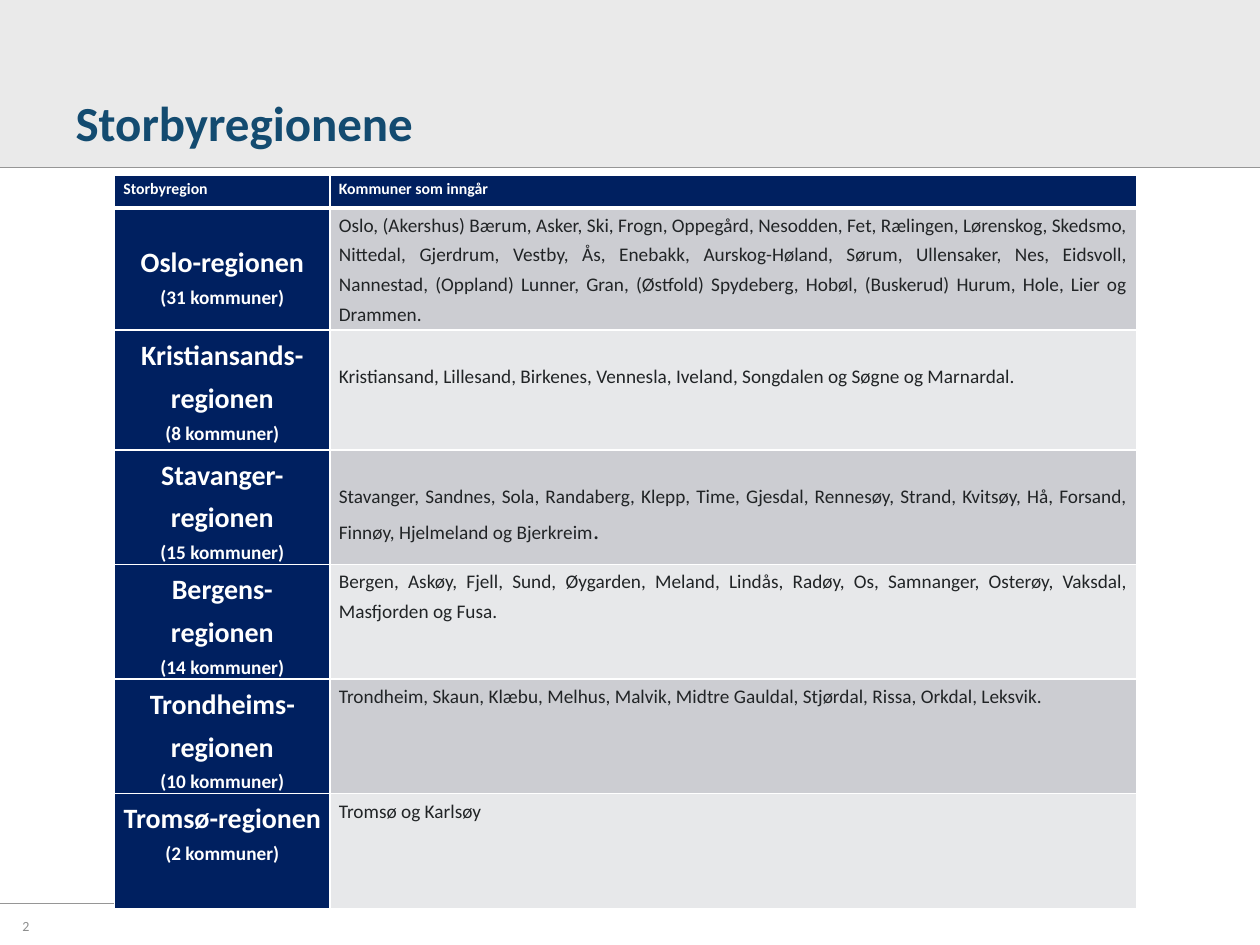
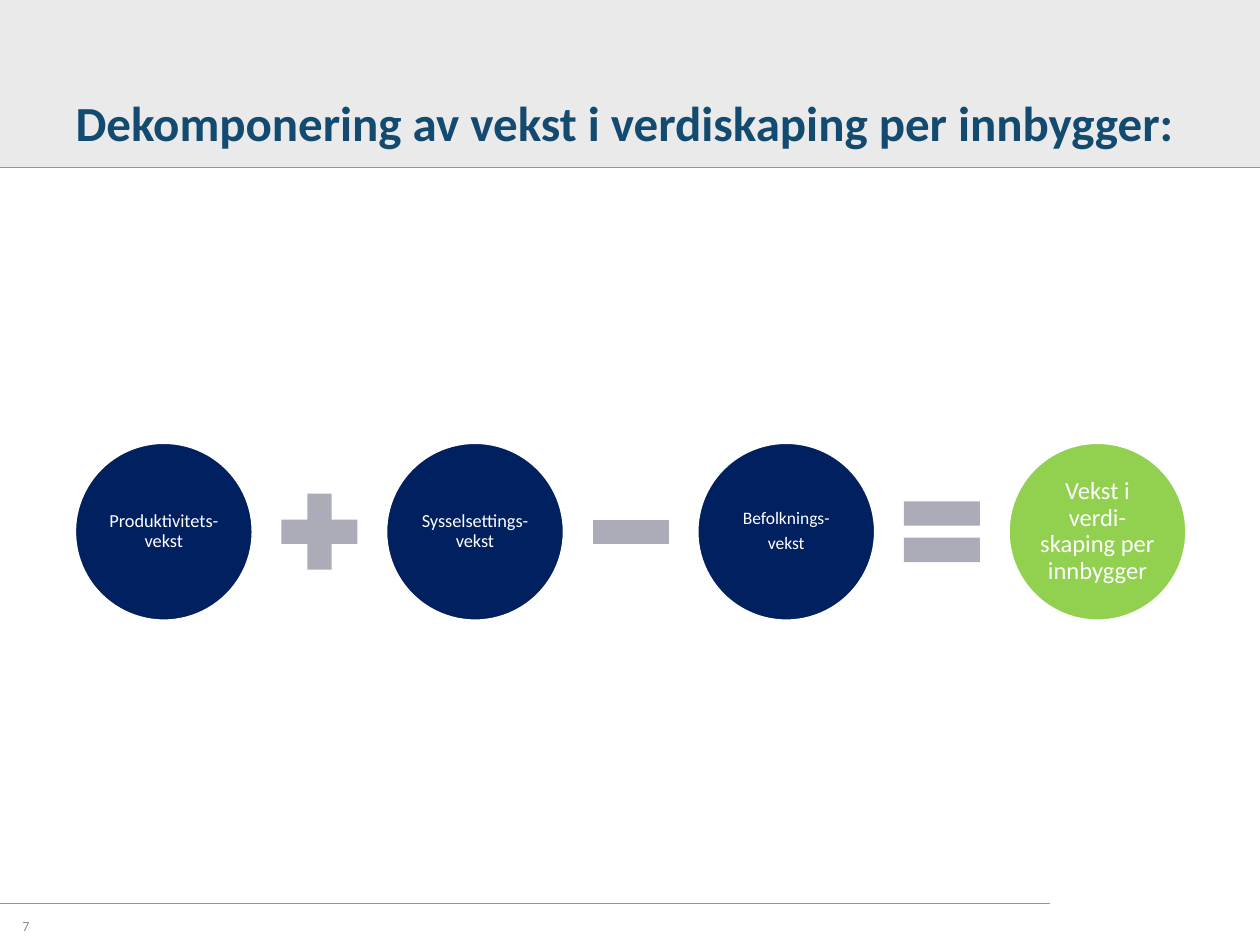
"""Build two slides on Norwegian city regions and the decomposition of growth."""
from lxml import etree
from pptx import Presentation
from pptx.dml.color import RGBColor
from pptx.enum import shapes, text
from pptx.oxml import ns
from pptx.util import Inches, Pt

COLORS = {
    "title": "134B70", "band": "EAEAEA", "rule": "969696", "number": "8D8E8E",
    "navy": "002060", "green": "92D050", "operator": "ABACB7", "white": "FFFFFF",
    "body": "212426", "dark_row": "CCCDD2", "light_row": "E7E8EA",
}
FONT = "Calibri"
ALIGN = text.PP_ALIGN
SHAPE = shapes.MSO_SHAPE

HEADINGS = ("Storbyregion", "Kommuner som inngår")
REGIONS = [
    ("Oslo-regionen", "(31 kommuner)",
     "Oslo, (Akershus) Bærum, Asker, Ski, Frogn, Oppegård, Nesodden, Fet, Rælingen, "
     "Lørenskog, Skedsmo, Nittedal, Gjerdrum, Vestby, Ås, Enebakk, Aurskog-Høland, Sørum, "
     "Ullensaker, Nes, Eidsvoll, Nannestad, (Oppland) Lunner, Gran, (Østfold) Spydeberg, "
     "Hobøl, (Buskerud) Hurum, Hole, Lier og Drammen."),
    ("Kristiansands-regionen", "(8 kommuner)",
     "Kristiansand, Lillesand, Birkenes, Vennesla, Iveland, Songdalen og Søgne og Marnardal."),
    ("Stavanger-regionen", "(15 kommuner)",
     "Stavanger, Sandnes, Sola, Randaberg, Klepp, Time, Gjesdal, Rennesøy, Strand, Kvitsøy, "
     "Hå, Forsand, Finnøy, Hjelmeland og Bjerkreim"),
    ("Bergens-regionen", "(14 kommuner)",
     "Bergen, Askøy, Fjell, Sund, Øygarden, Meland, Lindås, Radøy, Os, Samnanger, Osterøy, "
     "Vaksdal, Masfjorden og Fusa."),
    ("Trondheims-regionen", "(10 kommuner)",
     "Trondheim, Skaun, Klæbu, Melhus, Malvik, Midtre Gauldal, Stjørdal, Rissa, Orkdal, Leksvik."),
    ("Tromsø-regionen", "(2 kommuner)", "Tromsø og Karlsøy"),
]
COLUMN_WIDTHS = (1.71, 6.4)
ROW_HEIGHTS = (0.26, 0.97, 0.95, 0.91, 0.91, 0.91, 0.91)
LOWERED_CELLS = {(1, 0), (2, 1), (3, 1)}
LARGE_STOP_ROW = 3

TERMS = [
    ("Produktivitets-vekst", 10.5, "navy"),
    ("Sysselsettings-vekst", 10.5, "navy"),
    ("Befolknings-\nvekst", 10, "navy"),
    ("Vekst i verdi-skaping per innbygger", 14, "green"),
]
OPERATORS = [SHAPE.MATH_PLUS, SHAPE.MATH_MINUS, SHAPE.MATH_EQUAL]
CIRCLE, OPERATOR, PITCH = 1.42, 0.82, 2.47
EQUATION_LEFT, EQUATION_MIDDLE = 0.59, 4.22


def rgb(name):
    return RGBColor.from_string(COLORS[name])


def style(p, size, color, bold=False, align=None, spacing=None):
    p.alignment = align
    p.line_spacing = spacing
    for r in p.runs:
        r.font.name, r.font.size, r.font.bold = FONT, Pt(size), bold
        r.font.color.rgb = rgb(color)


def set_margins(part, side, top):
    part.margin_left = part.margin_right = Inches(side)
    part.margin_top = Inches(top)
    part.margin_bottom = Inches(0 if top != side else side)


def add_filled(s, kind, left, top, width, height, color):
    sp = s.shapes.add_shape(kind, *map(Inches, (left, top, width, height)))
    sp.shadow.inherit = False
    sp.fill.solid()
    sp.fill.fore_color.rgb = rgb(color)
    sp.line.fill.background()
    return sp


def add_rule(s, right, y):
    line = s.shapes.add_connector(shapes.MSO_CONNECTOR.STRAIGHT,
                                  Inches(right), Inches(y), 0, Inches(y))
    line.line.color.rgb = rgb("rule")
    line.line.width = Pt(0.25)
    etree.SubElement(line.element.spPr, ns.qn("a:effectLst"))


def add_slide(prs, title, number):
    s = prs.slides.add_slide(prs.slide_layouts[5])
    add_rule(s, 8.33, 7.17)
    add_filled(s, SHAPE.RECTANGLE, 0, 0, 10, 1.33, "band")
    add_rule(s, 10, 1.33)

    sp = s.shapes.title
    sp.element.getparent().append(sp.element)
    sp.left, sp.top, sp.width, sp.height = map(Inches, (0.5, 0, 9, 1.25))
    tf = sp.text_frame
    tf.text = title
    tf.auto_size = text.MSO_AUTO_SIZE.NONE
    tf.vertical_anchor = text.MSO_ANCHOR.BOTTOM
    style(tf.paragraphs[0], 28, "title", True, ALIGN.LEFT)

    tf = s.shapes.add_textbox(*map(Inches, (0.08, 7.15, 2.33, 0.4))).text_frame
    tf.word_wrap = True
    tf.text = str(number)
    tf.vertical_anchor = text.MSO_ANCHOR.MIDDLE
    style(tf.paragraphs[0], 8, "number")
    return s


def set_borders(cell, row):
    widths = {"lnL": 1, "lnR": 1, "lnT": 3 if row == 1 else 1, "lnB": 3 if row == 0 else 1}
    tc_pr = cell._tc.get_or_add_tcPr()
    for tag, width in widths.items():
        ln = etree.SubElement(tc_pr, ns.qn(f"a:{tag}"), w=str(Pt(width)))
        fill = etree.SubElement(ln, ns.qn("a:solidFill"))
        etree.SubElement(fill, ns.qn("a:srgbClr"), val=COLORS["white"])


def fill_cell(cell, row, col, lines, color):
    set_borders(cell, row)
    cell.fill.solid()
    cell.fill.fore_color.rgb = rgb(color)
    set_margins(cell, 0.07, 0.23 if (row, col) in LOWERED_CELLS else 0)
    label = row == 0 or col == 0
    align = ALIGN.CENTER if row and col == 0 else ALIGN.JUSTIFY
    cell.text_frame.text = "\n".join(line for line, _ in lines)
    for p, (_, size) in zip(cell.text_frame.paragraphs, lines):
        style(p, size, "white" if label else "body", label, align, 1.25)


def add_region_table(s):
    frame = s.shapes.add_table(len(ROW_HEIGHTS), len(COLUMN_WIDTHS), Inches(0.91), Inches(1.39),
                               Inches(sum(COLUMN_WIDTHS)), Inches(sum(ROW_HEIGHTS)))
    table = frame.table
    table.horz_banding = False
    for column, width in zip(table.columns, COLUMN_WIDTHS):
        column.width = Inches(width)
    for row, height in zip(table.rows, ROW_HEIGHTS):
        row.height = Inches(height)
    for col, heading in enumerate(HEADINGS):
        fill_cell(table.cell(0, col), 0, col, [(heading, 9)], "navy")
    for row, (name, count, members) in enumerate(REGIONS, 1):
        fill_cell(table.cell(row, 0), row, 0, [(name, 16), (count, 11)], "navy")
        fill_cell(table.cell(row, 1), row, 1, [(members, 11)],
                  "dark_row" if row % 2 else "light_row")
    p = table.cell(LARGE_STOP_ROW, 1).text_frame.paragraphs[0]
    r = p.add_run()
    r.text = "."
    r.font.name, r.font.size, r.font.bold = FONT, Pt(14), False
    r.font.color.rgb = rgb("body")


def add_equation(s):
    for i, (label, size, color) in enumerate(TERMS):
        left = EQUATION_LEFT + i * PITCH
        sp = add_filled(s, SHAPE.OVAL, left, EQUATION_MIDDLE - CIRCLE / 2, CIRCLE, CIRCLE, color)
        sp.line.color.rgb = rgb("white")
        sp.line.width = Pt(2)
        tf = sp.text_frame
        tf.word_wrap = True
        tf.vertical_anchor = text.MSO_ANCHOR.MIDDLE
        set_margins(tf, 0.02, 0.02)
        tf.text = label
        for p in tf.paragraphs:
            style(p, size, "white", False, ALIGN.CENTER, 0.9)
            p.space_after = Pt(0.35 * size)
        if i < len(OPERATORS):
            gap = (PITCH - CIRCLE - OPERATOR) / 2
            add_filled(s, OPERATORS[i], left + CIRCLE + gap, EQUATION_MIDDLE - OPERATOR / 2,
                       OPERATOR, OPERATOR, "operator")


def main():
    prs = Presentation()
    prs.slide_width, prs.slide_height = Inches(10), Inches(7.5)
    add_region_table(add_slide(prs, "Storbyregionene", 2))
    add_equation(add_slide(prs, "Dekomponering av vekst i verdiskaping per innbygger:", 7))
    prs.save("out.pptx")


if __name__ == "__main__":
    main()
